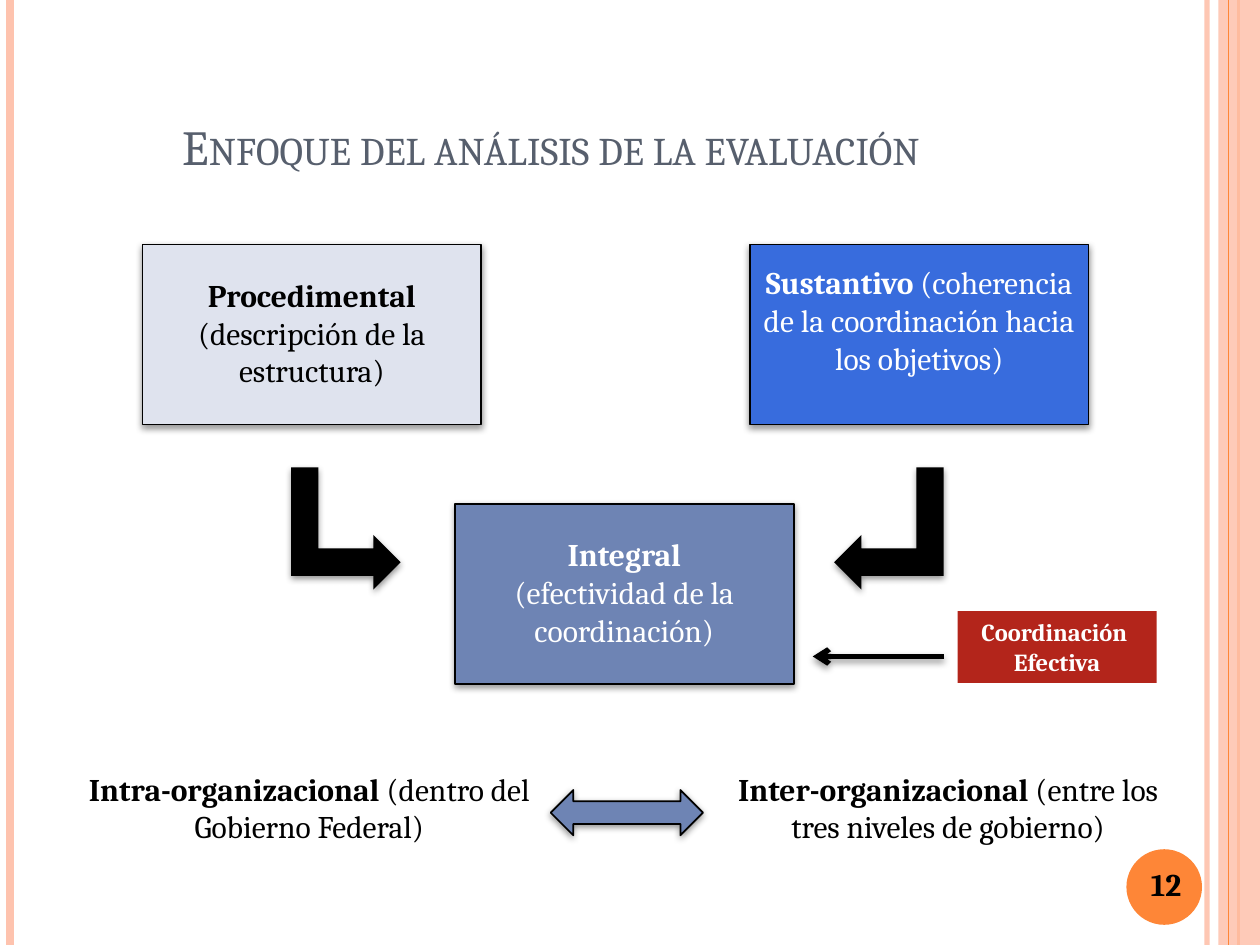
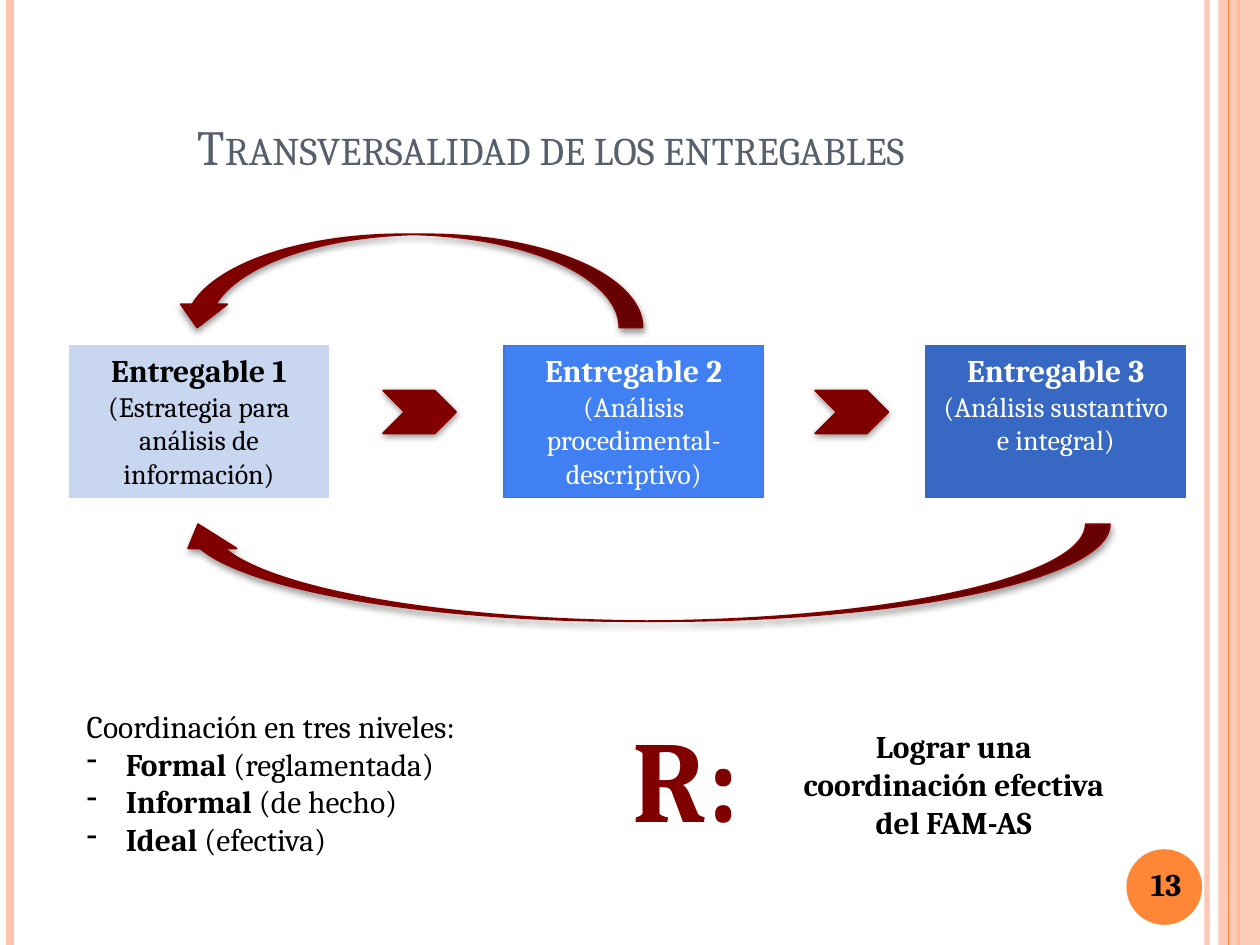
from pptx import Presentation
from pptx.dml.color import RGBColor
from pptx.enum.shapes import MSO_CONNECTOR as Connector, MSO_SHAPE as Shape
from pptx.enum.text import MSO_ANCHOR as Anchor, PP_ALIGN as Align
from pptx.oxml.ns import qn
from pptx.oxml.xmlchemy import OxmlElement
from pptx.util import Inches, Pt

COLORS = {
    "title": "575F6D", "black": "000000", "white": "FFFFFF",
    "orange": "FE8637", "peach": "FEC3AE", "maroon": "800000", "red": "B3251B",
    "mist": "DFE3EE", "royal": "386CDD", "slate": "6E84B4",
    "pale": "C8D6F0", "sky": "4080F2", "sky_edge": "3B75DC", "navy": "3668C4",
}
FONT = "Cambria"


def child(parent, tag, **attributes):
    element = OxmlElement(tag)
    for name, value in attributes.items():
        element.set(name, str(value))
    parent.append(element)
    return element


class Board:
    def __init__(self):
        self.deck = Presentation()
        self.deck.slide_width, self.deck.slide_height = Inches(10), Inches(7.5)
        self.page = None

    def color(self, name):
        return RGBColor.from_string(COLORS[name])

    def fade(self, item, percent):
        tint = next(item._element.spPr.iter(qn("a:srgbClr")))
        child(tint, "a:alpha", val=percent * 1000)

    def shade(self, item, alpha=42, distance=1.6):
        effects = item._element.spPr.find(qn("a:effectLst"))
        shadow = child(effects, "a:outerShdw", blurRad=Pt(4), dist=Pt(distance),
                       dir=5400000, rotWithShape=0)
        tint = child(shadow, "a:srgbClr", val=COLORS["black"])
        child(tint, "a:alpha", val=alpha * 1000)

    def new_page(self, title, number):
        self.page = self.deck.slides.add_slide(self.deck.slide_layouts[5])
        self.shape(Shape.OVAL, 8.94, 6.74, 0.6, 0.6, "orange")
        stripe = self.line(9.58, 0, 9.58, 7.5, "peach", 3)
        self.fade(stripe, 93)
        self.line(0.08, 0, 0.08, 7.5, "peach", 4.5)
        self.line(9.83, 0, 9.83, 7.5, "orange", 1.5)
        band = self.shape(Shape.RECTANGLE, 9.67, 0, 0.33, 7.5, "peach")
        self.fade(band, 87)
        self.line(9.75, 0, 9.75, 7.5, "orange", 0.75)

        heading = self.page.shapes.title
        heading.left, heading.top = Inches(0.12), Inches(0.44)
        heading.width, heading.height = Inches(8.51), Inches(1)
        self.set_text(heading, [[(title, False)]], "title", 28, anchor=Anchor.BOTTOM)
        span = heading.text_frame.paragraphs[0].runs[0]
        span.font._element.set("cap", "small")
        self.text(8.94, 6.74, 0.63, 0.55, [[(str(number), True)]], anchor=Anchor.MIDDLE)

    def line(self, x1, y1, x2, y2, color, width):
        connector = self.page.shapes.add_connector(
            Connector.STRAIGHT, Inches(x1), Inches(y1), Inches(x2), Inches(y2))
        connector.line.color.rgb = self.color(color)
        connector.line.width = Pt(width)
        child(connector._element.spPr, "a:effectLst")
        return connector

    def arrow(self, x1, y1, x2, y2):
        connector = self.line(x1, y1, x2, y2, "black", 3)
        child(connector._element.spPr.find(qn("a:ln")), "a:tailEnd", type="arrow")
        self.shade(connector, 40, 2)

    def shape(self, kind, left, top, width, height, fill, edge=None,
              edge_width=1, shadow=False, rotation=0, flip=None):
        box = self.page.shapes.add_shape(
            kind, Inches(left), Inches(top), Inches(width), Inches(height))
        box.shadow.inherit = False
        box.fill.solid()
        box.fill.fore_color.rgb = self.color(fill)
        if edge:
            box.line.color.rgb = self.color(edge)
            box.line.width = Pt(edge_width)
        else:
            box.line.fill.background()
        box.rotation = rotation
        if flip:
            box._element.spPr.xfrm.set(flip, "1")
        if shadow:
            self.shade(box)
        return box

    def set_text(self, box, paragraphs, color="black", size=18, align=Align.CENTER,
                 anchor=Anchor.TOP, bullets_from=None):
        frame = box.text_frame
        frame.word_wrap = True
        frame.vertical_anchor = anchor
        for index, pieces in enumerate(paragraphs):
            para = frame.paragraphs[0] if index == 0 else frame.add_paragraph()
            para.alignment = align
            if bullets_from is not None and index >= bullets_from:
                settings = para._p.get_or_add_pPr()
                settings.set("marL", str(Inches(0.31)))
                settings.set("indent", str(Inches(-0.31)))
                child(settings, "a:buChar", char="-")
            for words, bold, *own_size in pieces:
                span = para.add_run()
                span.text = words
                span.font.name = FONT
                span.font.size = Pt(own_size[0] if own_size else size)
                span.font.bold = bold
                span.font.color.rgb = self.color(color)

    def text(self, left, top, width, height, paragraphs, *style, **options):
        box = self.page.shapes.add_textbox(
            Inches(left), Inches(top), Inches(width), Inches(height))
        self.set_text(box, paragraphs, *style, **options)

    def card(self, left, top, fill, color, inset, height, paragraphs):
        self.shape(Shape.RECTANGLE, left, top, 2.69, 1.43, fill, "black", shadow=True)
        self.text(left, top + inset, 2.69, height, paragraphs, color)


def build_approach(board):
    board.new_page("Enfoque del análisis de la evaluación", 12)
    board.card(1.13, 1.94, "mist", "black", 0.2, 1.01,
               [[("Procedimental", True), (" (descripción de la estructura)", False)]])
    board.card(5.95, 1.94, "royal", "white", 0.1, 1.31,
               [[("Sustantivo ", True),
                 ("(coherencia de la coordinación hacia los objetivos)", False)]])
    board.card(3.61, 4, "slate", "white", 0.2, 1.01,
               [[("Integral", True)], [("(efectividad de la coordinación)", False)]])
    for left, flip in ((2.26, None), (6.57, "flipV")):
        board.shape(Shape.BENT_UP_ARROW, left, 3.76, 0.97, 0.87, "black",
                    shadow=True, rotation=90, flip=flip)
    goal = board.shape(Shape.RECTANGLE, 7.6, 4.85, 1.58, 0.57, "red")
    board.set_text(goal, [[("Coordinación ", True)], [("Efectiva", True)]], "white", 14)
    board.arrow(7.49, 5.21, 6.45, 5.21)
    scopes = (
        (0.59, "Intra-organizacional", " (dentro del Gobierno Federal)"),
        (5.66, "Inter-organizacional", " (entre los tres niveles de gobierno)"),
    )
    for left, name, detail in scopes:
        board.text(left, 6.06, 3.73, 0.7, [[(name, True), (detail, False)]])
    board.shape(Shape.LEFT_RIGHT_ARROW, 4.37, 6.27, 1.21, 0.36, "slate", "black",
                shadow=True)


def build_deliverables(board):
    board.new_page("Transversalidad de los entregables", 13)
    deliverables = (
        (0.55, "pale", "pale", "black", "(Estrategia para análisis de información)"),
        (4, "sky", "sky_edge", "white", "(Análisis procedimental-descriptivo)"),
        (7.35, "navy", "navy", "white", "(Análisis sustantivo e integral)"),
    )
    for number, (left, fill, edge, color, detail) in enumerate(deliverables, 1):
        box = board.shape(Shape.RECTANGLE, left, 2.74, 2.06, 1.21, fill, edge, 0.75)
        board.set_text(box, [[(f"Entregable {number}", True)], [(detail, False, 16)]],
                       color)
    for left in (3.04, 6.47):
        board.shape(Shape.CHEVRON, left, 3.1, 0.58, 0.34, "maroon", "maroon", shadow=True)
    returns = ((2.87, 0.37, 0.74, 3.72, None), (4.71, 0.83, 0.77, 7.43, "flipH"))
    for left, top, width, height, flip in returns:
        board.shape(Shape.CURVED_RIGHT_ARROW, left, top, width, height, "maroon",
                    "maroon", shadow=True, rotation=90, flip=flip)
    levels = (("Formal", " (reglamentada)"), ("Informal", " (de hecho)"),
              ("Ideal", " (efectiva)"))
    board.text(0.59, 5.56, 4.06, 1.31,
               [[("Coordinación en tres niveles:", False)]]
               + [[(name, True), (detail, False)] for name, detail in levels],
               align=Align.LEFT, bullets_from=1)
    board.text(4.92, 5.56, 1.42, 1.21, [[("R:", True)]], "maroon", 66, align=Align.LEFT)
    board.text(6.1, 5.72, 2.94, 1.01,
               [[("Lograr una coordinación efectiva del FAM-AS", True)]])


def main():
    board = Board()
    build_approach(board)
    build_deliverables(board)
    board.deck.save("out.pptx")


if __name__ == "__main__":
    main()
